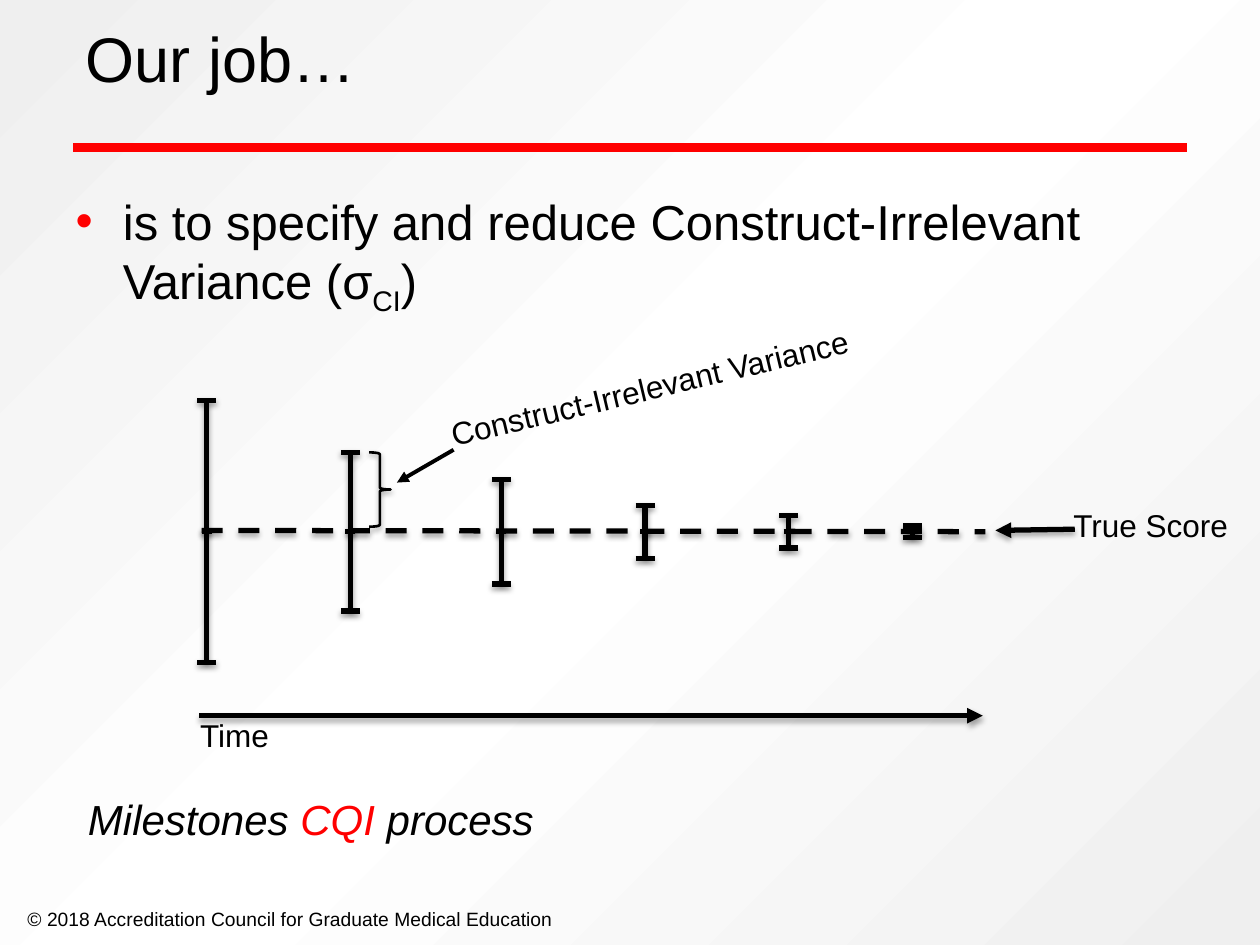
from copy import deepcopy
from lxml.etree import SubElement
from pptx import Presentation
from pptx.dml.color import RGBColor
from pptx.enum.dml import MSO_LINE
from pptx.enum.shapes import MSO_CONNECTOR, MSO_SHAPE
from pptx.enum.text import MSO_ANCHOR, MSO_AUTO_SIZE, PP_ALIGN
from pptx.oxml.ns import qn
from pptx.util import Inches, Pt

BLACK = RGBColor(0, 0, 0)
RED = RGBColor(255, 0, 0)
WHITE = RGBColor(255, 255, 255)
GREY = RGBColor(239, 239, 239)

COLS, ROWS = 100, 75
WIDTH, HEIGHT = Inches(10), Inches(7.5)
AXIS = 42.2
BARS = [(16.4, 10.4), (27.8, 6.3), (39.8, 4.15), (51.2, 2.1), (62.6, 1.3), (72.4, 0.45)]


def col(n):
    return round(WIDTH * n / COLS)


def row(n):
    return round(HEIGHT * n / ROWS)


def area(x, y, w, h):
    return col(x), row(y), col(w), row(h)


def paint(slide):
    fill = slide.background.fill
    fill.gradient()
    fill.gradient_angle = 315
    stops = slide.element.find(".//" + qn("a:gsLst"))
    stops.append(deepcopy(stops[0]))
    for stop, tone, place in zip(fill.gradient_stops, (GREY, WHITE, GREY), (0, 0.5, 1)):
        stop.color.rgb = tone
        stop.position = place


def shade(shape, shown=True):
    props = shape._element.spPr
    for old in props.findall(qn("a:effectLst")):
        props.remove(old)
    effect = SubElement(props, qn("a:effectLst"))
    if shown:
        cast = SubElement(effect, qn("a:outerShdw"), blurRad=str(Pt(3.1)),
                          dist=str(Pt(1.8)), dir="5400000", rotWithShape="0")
        tint = SubElement(cast, qn("a:srgbClr"), val=str(BLACK))
        SubElement(tint, qn("a:alpha"), val="35000")


def rule(slide, start, end, size=3, tone=BLACK, arrow=False, dash=False, shadow=True):
    line = slide.shapes.add_connector(
        MSO_CONNECTOR.STRAIGHT, col(start[0]), row(start[1]), col(end[0]), row(end[1]))
    line.line.color.rgb = tone
    line.line.width = Pt(size)
    if dash:
        line.line.dash_style = MSO_LINE.DASH
    if arrow:
        SubElement(line.line._get_or_add_ln(), qn("a:tailEnd"), type="triangle")
    shade(line, shadow)


def bar(slide, x, reach):
    rule(slide, (x, AXIS - reach), (x, AXIS + reach))
    for y, half in ((AXIS + reach, 0.75), (AXIS - reach, 0.75), (AXIS, 0.4)):
        rule(slide, (x - half, y), (x + half, y))


def brace(slide, box):
    shape = slide.shapes.add_shape(MSO_SHAPE.RIGHT_BRACE, *area(*box))
    shape.fill.background()
    shape.line.color.rgb = BLACK
    shape.line.width = Pt(1.5)
    shade(shape)


def style(para, size):
    para.font.size = Pt(size)
    para.font.name = "Arial"
    para.font.color.rgb = BLACK


def label(slide, text, box, size=18, turn=0, wrap=False):
    shape = slide.shapes.add_textbox(*area(*box))
    shape.rotation = turn
    shape.text_frame.word_wrap = wrap
    para = shape.text_frame.paragraphs[0]
    para.text = text
    style(para, size)
    return para


def place(shape, box, anchor):
    shape.left, shape.top, shape.width, shape.height = area(*box)
    frame = shape.text_frame
    frame.auto_size = MSO_AUTO_SIZE.NONE
    frame.vertical_anchor = anchor
    para = frame.paragraphs[0]
    para.alignment = PP_ALIGN.LEFT
    return para


def title(slide, text):
    para = place(slide.shapes.title, (5.8, -1.7, 90, 12.5), MSO_ANCHOR.MIDDLE)
    para.text = text
    style(para, 36)


def body(slide, text, index, close):
    para = place(slide.placeholders[1], (5, 14.7, 90, 49.5), MSO_ANCHOR.TOP)
    para.space_before = Pt(0)
    props = para._p.get_or_add_pPr()
    props.set("marL", str(col(3.75)))
    props.set("indent", str(-col(3.75)))
    tint = SubElement(props, qn("a:buClr"))
    SubElement(tint, qn("a:srgbClr"), val=str(RED))
    SubElement(props, qn("a:buFont"), typeface="Arial")
    SubElement(props, qn("a:buChar"), char="•")
    for part in (text, index, close):
        run = para.add_run()
        run.text = part
        if part == index:
            run.font._element.set("baseline", "-25000")
    style(para, 28)


def process(slide):
    para = label(slide, "Milestones ", (6, 62.5, 90, 5.3), 24, wrap=True)
    para.font.italic = True
    key = para.add_run()
    key.text = "CQI"
    key.font.color.rgb = RED
    para.add_run().text = " process"


def chart(slide):
    for x, reach in BARS:
        bar(slide, x, reach)
    rule(slide, (16, 42.1), (78.2, AXIS), dash=True)
    rule(slide, (85.3, 42), (79, 42.1), arrow=True)
    rule(slide, (15.8, 56.8), (78, 56.8), arrow=True)
    brace(slide, (29.3, 35.9, 1.7, 5.9))
    label(slide, "Construct-Irrelevant Variance", (34.4, 28.7, 34.7, 4), turn=346.6)
    rule(slide, (36, 35.7), (31.5, 38.3), 2.25, arrow=True, shadow=False)
    label(slide, "True Score", (84.2, 39.7, 14.4, 4))
    label(slide, "Time", (14.9, 56.3, 7.5, 4))


def main():
    deck = Presentation()
    deck.slide_width, deck.slide_height = WIDTH, HEIGHT
    slide = deck.slides.add_slide(deck.slide_layouts[1])
    paint(slide)
    rule(slide, (5.8, 11.7), (94.2, 11.7), 5, RED, shadow=False)
    label(slide, "© 2018 Accreditation Council for Graduate Medical Education",
          (1.2, 71.5, 44, 2.9), 11)
    title(slide, "Our job…")
    body(slide, "is to specify and reduce Construct-Irrelevant Variance (σ", "CI", ")")
    chart(slide)
    process(slide)
    deck.save("out.pptx")


if __name__ == "__main__":
    main()
